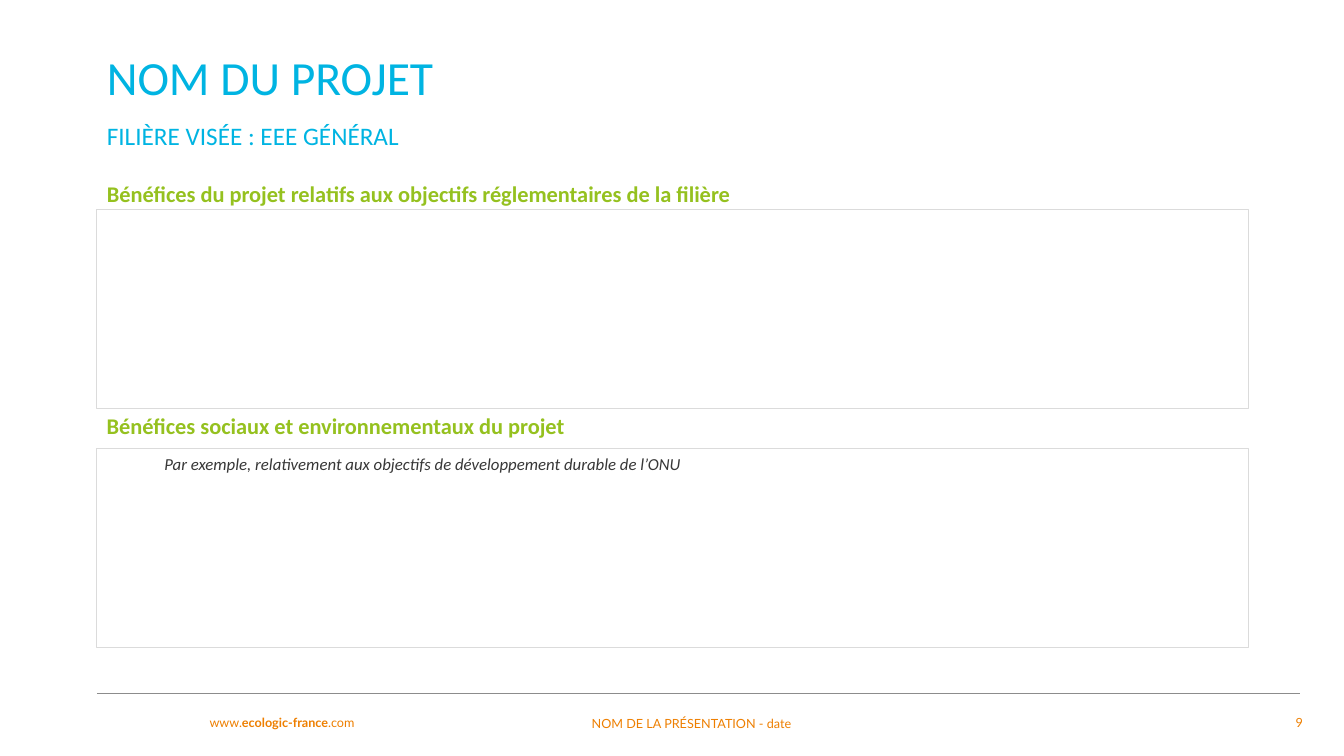
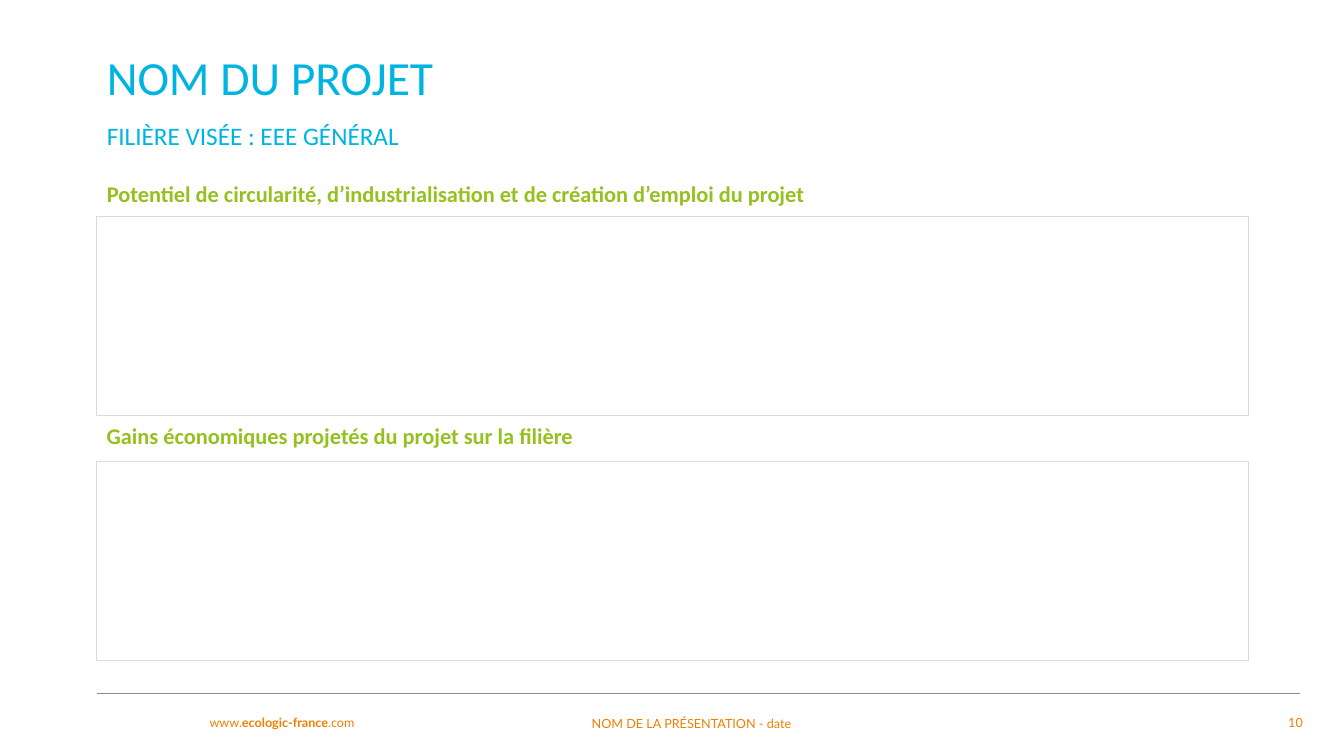
from lxml import etree
from pptx import Presentation
from pptx.dml.color import RGBColor
from pptx.enum.shapes import MSO_CONNECTOR, MSO_SHAPE
from pptx.enum.text import MSO_ANCHOR, MSO_AUTO_SIZE, PP_ALIGN
from pptx.oxml.ns import qn
from pptx.util import Pt

LEFT, RIGHT, JUSTIFY = PP_ALIGN.LEFT, PP_ALIGN.RIGHT, PP_ALIGN.JUSTIFY
TOP, MIDDLE = MSO_ANCHOR.TOP, MSO_ANCHOR.MIDDLE
GROW, FIXED = MSO_AUTO_SIZE.SHAPE_TO_FIT_TEXT, MSO_AUTO_SIZE.NONE
RECTANGLE, STRAIGHT = MSO_SHAPE.RECTANGLE, MSO_CONNECTOR.STRAIGHT

PX = 9144  # 100 px to the inch
SLIDE_W, SLIDE_H = 1333, 750
MARGIN, CONTENT_W = 96, 1142
HEADING_H, FRAME_H = 40, 197
COMPARISON_LAYOUT = 4

COLORS = {
    "title": "00B4E2",
    "heading": "95C11F",
    "footer": "EE7F00",
    "rule": "8C8C8C",
    "frame": "DBDBDB",
    "body": "373737",
}
TITLE_STYLE = dict(size=34, color="title", spacing=0.9, fit=GROW)
SUBTITLE_STYLE = dict(size=18, color="title", fit=GROW)
HEADING_STYLE = dict(size=16, color="heading", bold=True, spacing=0.9, anchor=MIDDLE)
EXAMPLE_STYLE = dict(size=12, color="body", italic=True, align=JUSTIFY,
                     level=1, indent=67, inset_left=0)
FOOTER_STYLE = dict(size=9, color="footer", font="Lato", fit=GROW)

PROJECT = "NOM DU PROJET"
SECTOR = "FILIÈRE VISÉE : EEE GÉNÉRAL"
# Each section: heading, heading top, frame top, example text
PAGES = [
    (9, [
        ("Bénéfices du projet relatifs aux objectifs réglementaires de la filière",
         174, 208, None),
        ("Bénéfices sociaux et environnementaux du projet", 404, 445,
         "Par exemple, relativement aux objectifs de développement durable de l’ONU"),
    ]),
    (10, [
        ("Potentiel de circularité, d’industrialisation et de création d’emploi du projet",
         174, 215, None),
        ("Gains économiques projetés du projet sur la filière", 414, 458, None),
    ]),
]


def rgb(name):
    return RGBColor.from_string(COLORS[name])


def place(shape, x, y, w, h):
    shape.left, shape.top, shape.width, shape.height = (v * PX for v in (x, y, w, h))
    return shape


def add_box(slide, x, y, w, h):
    return slide.shapes.add_textbox(x * PX, y * PX, w * PX, h * PX)


def write(shape, text, *, size, color, font="Calibri", bold=False, italic=False,
          align=LEFT, anchor=TOP, spacing=1.0, fit=FIXED, level=0, indent=0,
          inset_left=10):
    """Write one paragraph; text is a string or a list of (string, bold) runs."""
    frame = shape.text_frame
    frame.word_wrap = True
    frame.auto_size = fit
    frame.vertical_anchor = anchor
    frame.margin_left, frame.margin_right = inset_left * PX, 10 * PX
    frame.margin_top = frame.margin_bottom = 5 * PX
    paragraph = frame.paragraphs[0]
    paragraph.level = level
    paragraph.alignment = align
    paragraph.line_spacing = spacing
    paragraph.space_before = Pt(0)
    properties = paragraph._p.get_or_add_pPr()
    properties.set("marL", str(indent * PX))
    properties.set("indent", "0")
    for part, part_bold in [(text, bold)] if isinstance(text, str) else text:
        run = paragraph.add_run()
        run.text = part
        run.font.name = font
        run.font.size = Pt(size)
        run.font.bold = part_bold
        run.font.italic = italic
        run.font.color.rgb = rgb(color)


def add_header(slide, title, subtitle, x, y, w):
    write(place(title, x, y, w, 62), PROJECT, **TITLE_STYLE)
    write(place(subtitle, x, y + 65, w, 40), SECTOR, **SUBTITLE_STYLE)


def add_section(slide, heading_box, section, x, w):
    """Place a heading and the outlined answer frame below it."""
    heading, heading_top, frame_top, example = section
    heading_box = heading_box or add_box(slide, x, heading_top, w, HEADING_H)
    write(place(heading_box, x, heading_top, w, HEADING_H), heading, **HEADING_STYLE)
    answer = slide.shapes.add_shape(RECTANGLE, x * PX, frame_top * PX, w * PX, FRAME_H * PX)
    answer.shadow.inherit = False
    answer.fill.background()
    answer.line.color.rgb = rgb("frame")
    answer.line.width = Pt(0.75)
    if example:
        write(answer, example, **EXAMPLE_STYLE)


def add_footer(slide, number, x, y):
    rule = slide.shapes.add_connector(STRAIGHT, x * PX, y * PX, (x + 1193) * PX, y * PX)
    rule.line.color.rgb = rgb("rule")
    rule.line.width = Pt(0.75)
    etree.SubElement(rule._element.spPr, qn("a:effectLst"))
    website = [("www.", False), ("ecologic-france", True), (".com", False)]
    write(add_box(slide, x + 102, y + 16, 178, 25), website, **FOOTER_STYLE)
    write(add_box(slide, x + 481, y + 17, 524, 25),
          "NOM DE LA PRÉSENTATION - date", **FOOTER_STYLE)
    write(add_box(slide, x + 1142, y + 16, 64, 26), str(number),
          align=RIGHT, **FOOTER_STYLE)


def build_project_slide(prs, number, sections):
    slide = prs.slides.add_slide(prs.slide_layouts[COMPARISON_LAYOUT])
    title, subtitle, left_content, first_heading, right_content = slide.placeholders
    for unused in (left_content, right_content):
        unused._element.getparent().remove(unused._element)
    add_footer(slide, number, MARGIN, 688)
    add_header(slide, title, subtitle, MARGIN, 49, CONTENT_W)
    for heading_box, section in zip((first_heading, None), sections):
        add_section(slide, heading_box, section, MARGIN, CONTENT_W)


def main():
    prs = Presentation()
    prs.slide_width, prs.slide_height = SLIDE_W * PX, SLIDE_H * PX
    for number, sections in PAGES:
        build_project_slide(prs, number, sections)
    prs.save("out.pptx")


if __name__ == "__main__":
    main()
